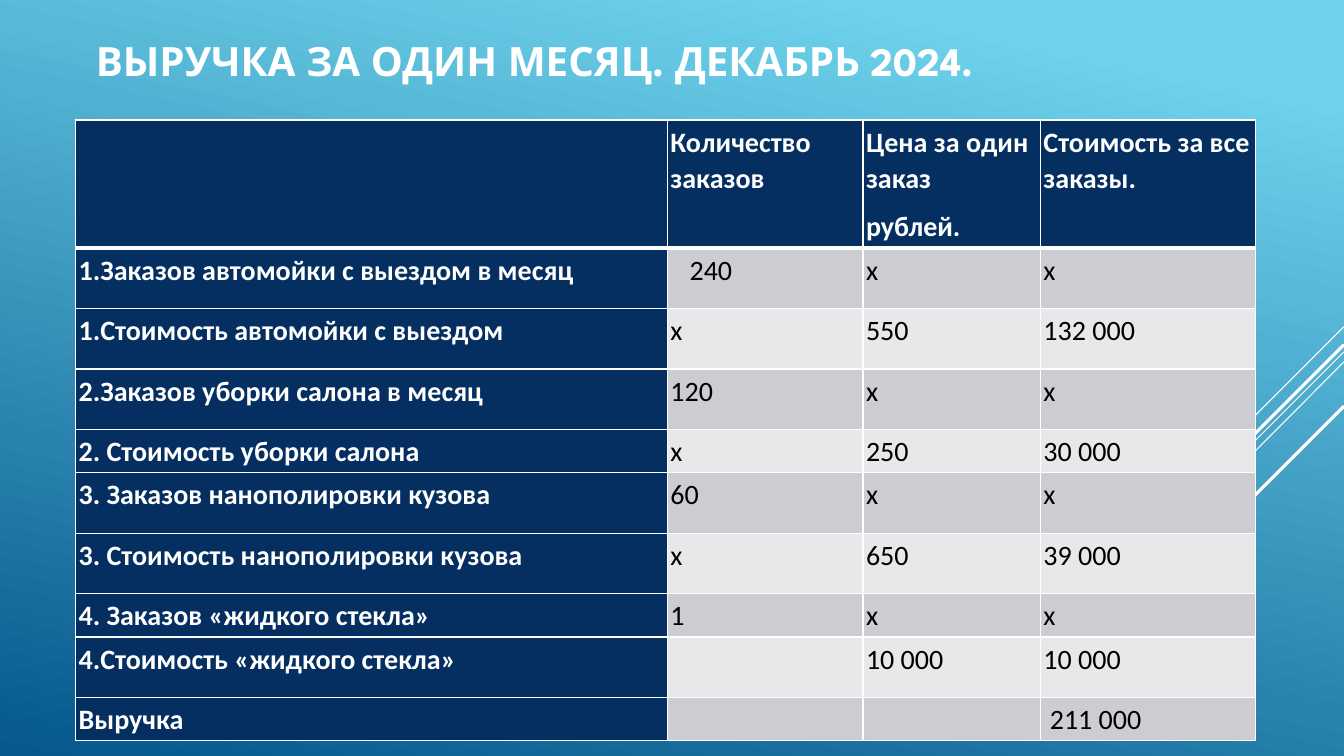
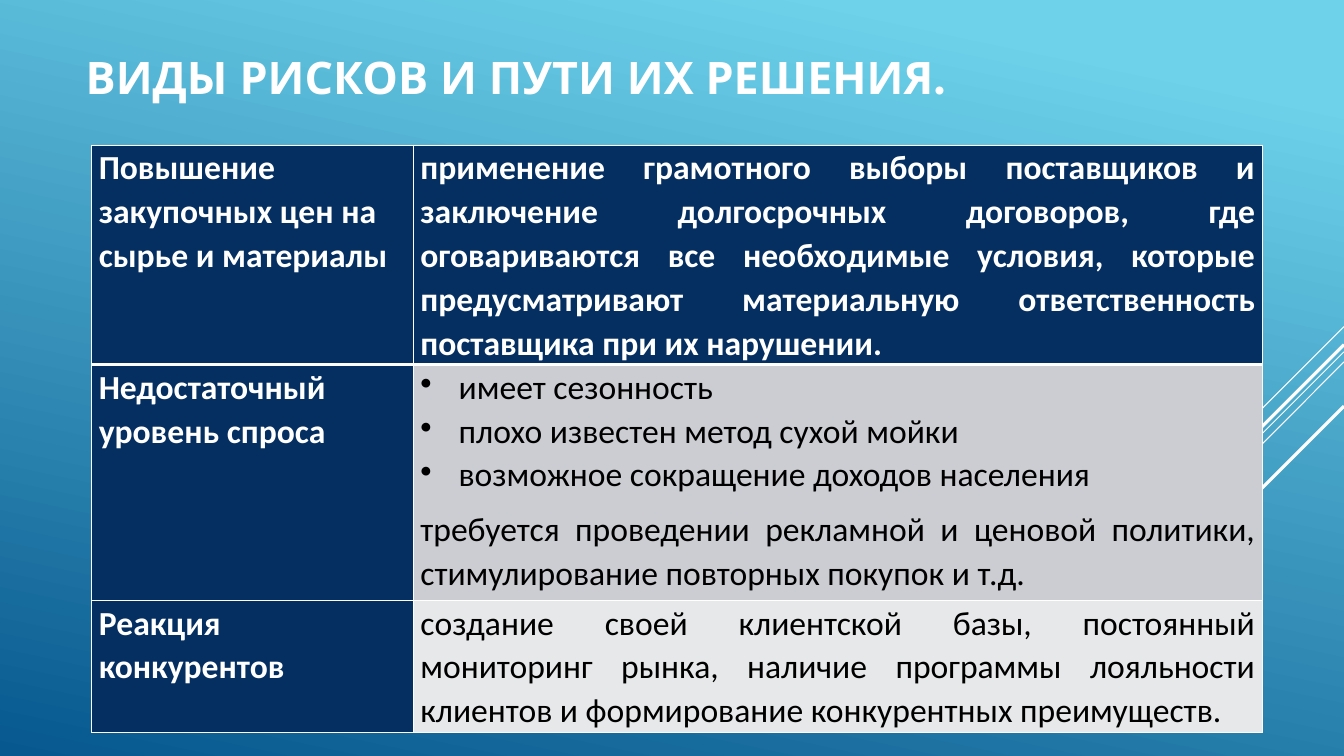
"""Build two slides on a car care service: monthly revenue and business risks."""
from pptx import Presentation
from pptx.dml.color import RGBColor
from pptx.enum.shapes import MSO_CONNECTOR as Connector
from pptx.enum.text import MSO_ANCHOR as Anchor, MSO_AUTO_SIZE as AutoSize, PP_ALIGN as Align
from pptx.oxml.ns import qn
from pptx.util import Inches, Pt
from lxml.etree import SubElement

COLORS = {
    "sky": "6ED2EB",
    "deep": "06588E",
    "navy": "052F61",
    "white": "FFFFFF",
    "black": "000000",
    "odd": "CCCDD2",
    "even": "E7E8EA",
}
TITLE_FONT = {"name": "League Spartan", "bold": True}
LABEL_FONT = {"name": "Calibri", "bold": True}
VALUE_FONT = {"name": "Calibri", "bold": False}
SPACING = {"line_spacing": 1.07, "space_after": Pt(8)}
RAYS = [
    (3.24, 12.33, 4.24, 0.75),
    (3.49, 10.07, 6.75, 0.75),
    (3.59, 11.26, 5.67, 0.75),
    (3.42, 11.42, 5.33, 2.25),
    (4.03, 11.94, 5.42, 2.25),
]
BULLET = "• "

REVENUE = [
    ["", "Количество заказов", "Цена за один заказ\nрублей.", "Стоимость за все заказы."],
    ["1.Заказов автомойки с выездом в месяц", "240", "х", "х"],
    ["1.Стоимость автомойки с выездом", "х", "550", "132 000"],
    ["2.Заказов уборки салона в месяц", "120", "х", "х"],
    ["2. Стоимость уборки салона", "х", "250", "30 000"],
    ["3. Заказов нанополировки кузова", "60", "х", "х"],
    ["3. Стоимость нанополировки кузова", "х", "650", "39 000"],
    ["4. Заказов «жидкого стекла»", "1", "х", "х"],
    ["4.Стоимость «жидкого стекла»", "", "10 000", "10 000"],
    ["Выручка", "", "", " 211 000"],
]
RISKS = [
    [
        "Повышение закупочных цен на сырье и материалы",
        "применение грамотного выборы поставщиков и заключение долгосрочных договоров, "
        "где оговариваются все необходимые условия, которые предусматривают "
        "материальную ответственность поставщика при их нарушении.",
    ],
    [
        "Недостаточный уровень спроса",
        "• имеет сезонность\n"
        "• плохо известен метод сухой мойки\n"
        "• возможное сокращение доходов населения\n"
        "требуется проведении рекламной и ценовой политики, "
        "стимулирование повторных покупок и т.д.",
    ],
    [
        "Реакция конкурентов",
        "создание своей клиентской базы, постоянный мониторинг рынка, наличие программы "
        "лояльности клиентов и формирование конкурентных преимуществ.",
    ],
]


def color(key):
    return RGBColor.from_string(COLORS[key])


def apply(target, values):
    for attribute, value in values.items():
        setattr(target, attribute, value)


class Deck:
    def __init__(self):
        self.prs = Presentation()
        apply(self.prs, {"slide_width": Inches(13.33), "slide_height": Inches(7.5)})
        self.slide = None
        backdrop = self.prs.slide_master.background.fill
        backdrop.gradient()
        backdrop.gradient_angle = 258
        for stop, key, position in zip(backdrop.gradient_stops, ("sky", "deep"), (0.1, 1)):
            stop.color.rgb = color(key)
            stop.position = position

    def new_slide(self):
        self.slide = self.prs.slides.add_slide(self.prs.slide_layouts[5])
        for start_y, end_x, end_y, weight in RAYS:
            self.ray(start_y, end_x, end_y, weight)

    def ray(self, start_y, end_x, end_y, weight):
        ray = self.slide.shapes.add_connector(
            Connector.STRAIGHT, Inches(13.33), Inches(start_y), Inches(end_x), Inches(end_y))
        ray.line.color.rgb = color("white")
        ray.line.width = Pt(weight)
        SubElement(ray._element.spPr, qn("a:effectLst"))

    def title(self, text, top, height, size, anchor=Anchor.MIDDLE, inset=0.1):
        heading = self.slide.shapes.title
        apply(heading, {"left": Inches(0.75), "top": Inches(top),
                        "width": Inches(11), "height": Inches(height)})
        frame = heading.text_frame
        apply(frame, {"text": text, "auto_size": AutoSize.NONE, "word_wrap": True,
                      "vertical_anchor": anchor, "margin_left": Inches(inset)})
        paragraph = frame.paragraphs[0]
        paragraph.alignment = Align.LEFT
        apply(paragraph.font, {**TITLE_FONT, "size": Pt(size)})
        paragraph.font.color.rgb = color("white")

    def table(self, rows, left, top, widths, heights, size, margins, value_align=Align.LEFT):
        grid = self.slide.shapes.add_table(
            len(rows), len(widths), Inches(left), Inches(top),
            Inches(sum(widths)), Inches(sum(heights))).table
        apply(grid, {"first_row": False, "horz_banding": False})
        for column, width in zip(grid.columns, widths):
            column.width = Inches(width)
        for r, (row, height) in enumerate(zip(rows, heights)):
            grid.rows[r].height = Inches(height)
            for c, text in enumerate(row):
                is_label = r == 0 or c == 0
                cell = grid.cell(r, c)
                apply(cell, margins)
                self.borders(cell, r)
                cell.fill.solid()
                band = "odd" if r % 2 else "even"
                cell.fill.fore_color.rgb = color("navy" if is_label else band)
                self.cell_text(cell, text, size, is_label, value_align if c else Align.LEFT)
        return grid

    def borders(self, cell, row):
        properties = cell._tc.get_or_add_tcPr()
        heavy_side = {0: "lnB", 1: "lnT"}.get(row)
        for side in ("lnL", "lnR", "lnT", "lnB"):
            width = Pt(3 if side == heavy_side else 1)
            edge = SubElement(properties, qn(f"a:{side}"), w=str(width))
            paint = SubElement(edge, qn("a:solidFill"))
            SubElement(paint, qn("a:srgbClr"), val=COLORS["white"])

    def cell_text(self, cell, text, size, is_label, align):
        lines = text.split("\n")
        cell.text = "\n".join(line.removeprefix(BULLET) for line in lines)
        for i, (paragraph, line) in enumerate(zip(cell.text_frame.paragraphs, lines)):
            apply(paragraph, {**SPACING, "alignment": align})
            apply(paragraph.font, {**(LABEL_FONT if is_label else VALUE_FONT), "size": Pt(size)})
            paragraph.font.color.rgb = color("white" if is_label else "black")
            if line.startswith(BULLET):
                self.bullet(paragraph)
                if lines[i + 1].startswith(BULLET):
                    paragraph.space_after = Pt(0)

    def bullet(self, paragraph):
        properties = paragraph._p.get_or_add_pPr()
        properties.set("marL", str(Inches(0.38)))
        properties.set("indent", str(-Inches(0.38)))
        mark = properties.makeelement(qn("a:buChar"), {"char": BULLET.strip()})
        properties.find(qn("a:defRPr")).addprevious(mark)


def main():
    deck = Deck()
    sides = ("margin_left", "margin_right", "margin_top", "margin_bottom")

    deck.new_slide()
    deck.title("ВЫРУЧКА ЗА ОДИН МЕСЯЦ. ДЕКАБРЬ 2024.", 0.31, 1.09, 28.8, Anchor.TOP, 0.2)
    tall, short = 0.6, 0.43
    revenue = deck.table(
        REVENUE, 0.75, 1.19, [5.87, 1.94, 1.76, 2.13],
        [1.27, tall, tall, tall, short, tall, tall, short, tall, short],
        20, dict.fromkeys(sides, Inches(0.03)))
    revenue.cell(1, 1).margin_left = Inches(0.22)

    deck.new_slide()
    deck.title("ВИДЫ РИСКОВ И ПУТИ ИХ РЕШЕНИЯ.", 0.16, 1.2, 32)
    deck.table(
        RISKS, 0.91, 1.44, [3.19, 8.42], [2.17, 2.34, 1.31], 24,
        dict(zip(sides, map(Inches, (0.07, 0.07, 0, 0)))), Align.JUSTIFY)

    deck.prs.save("out.pptx")


if __name__ == "__main__":
    main()
